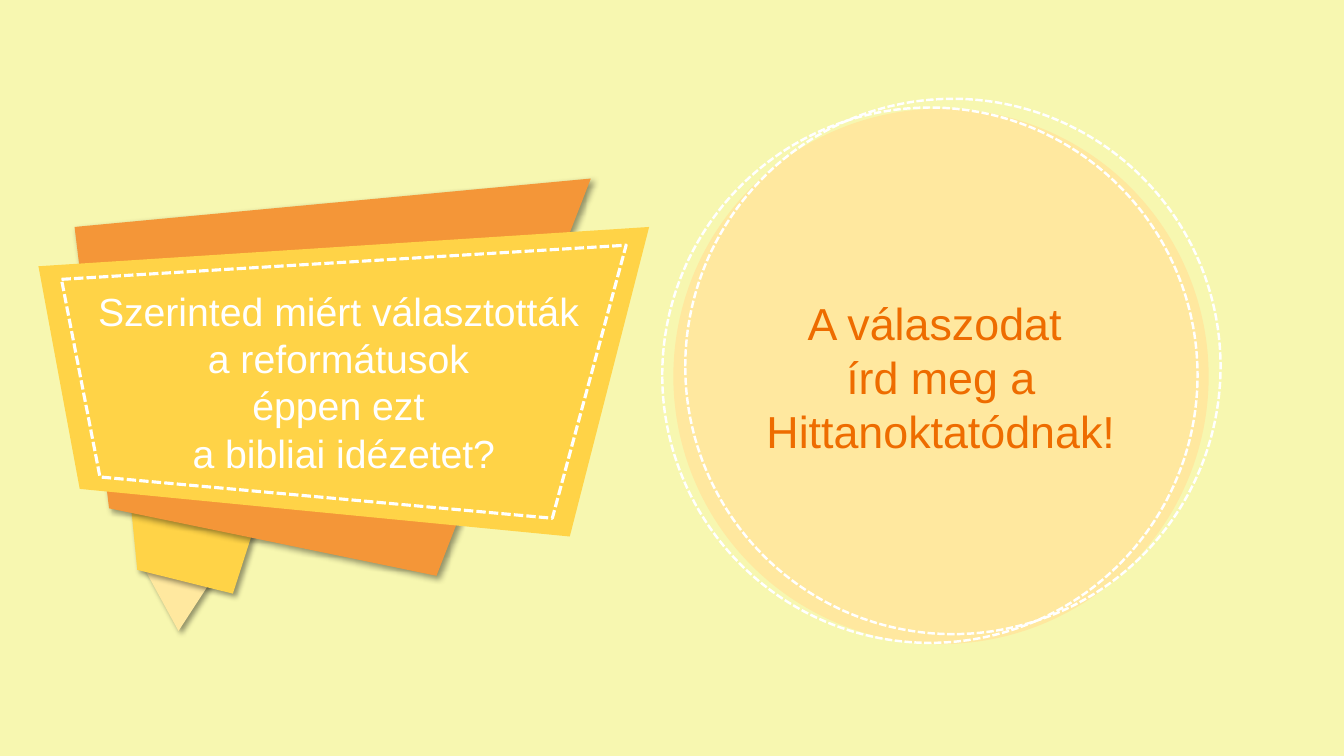
from lxml.etree import SubElement
from pptx import Presentation
from pptx.dml.color import RGBColor
from pptx.enum.dml import MSO_LINE
from pptx.enum.shapes import MSO_SHAPE
from pptx.enum.text import MSO_ANCHOR, PP_ALIGN
from pptx.oxml.ns import qn
from pptx.util import Cm, Pt

CREAM, YELLOW, ORANGE = "FFE89F", "FFD347", "F49638"
WHITE, DARK_ORANGE, PALE = "FFFFFF", "EE6C00", "F7F7B0"


def rgb(value):
    return RGBColor.from_string(value)


def paint(sp, color):
    sp.shadow.inherit = False
    sp.fill.solid()
    sp.fill.fore_color.rgb = rgb(color)
    sp.line.fill.background()


def dash(sp, width):
    sp.shadow.inherit = False
    sp.fill.background()
    sp.line.color.rgb = rgb(WHITE)
    sp.line.width = Pt(width)
    sp.line.dash_style = MSO_LINE.SQUARE_DOT


def add_shadow(sp):
    effects = sp._element.spPr.find(qn("a:effectLst"))
    shadow = SubElement(effects, qn("a:outerShdw"), blurRad=str(Pt(4)),
                        dist=str(Pt(3)), dir=str(45 * 60000),
                        algn="tl", rotWithShape="0")
    color = SubElement(shadow, qn("a:srgbClr"), val="000000")
    SubElement(color, qn("a:alpha"), val="40000")


def write(sp, text, size, color):
    tf = sp.text_frame
    tf.text = text
    tf.word_wrap = True
    tf.vertical_anchor = MSO_ANCHOR.MIDDLE
    for p in tf.paragraphs:
        p.alignment = PP_ALIGN.CENTER
        for r in p.runs:
            r.font.name = "Arial"
            r.font.size = Pt(size)
            r.font.color.rgb = rgb(color)


def add_polygon(shapes, left, top, points):
    corners = [(left + Cm(x), top + Cm(y)) for x, y in points]
    builder = shapes.build_freeform(*corners[0])
    builder.add_line_segments(corners[1:], close=True)
    return builder.convert_to_shape()


def add_answer_circle(s, left, top, size):
    sp = s.shapes.add_shape(MSO_SHAPE.OVAL, left, top, size, size)
    paint(sp, CREAM)
    write(sp, "A válaszodat \nírd meg a Hittanoktatódnak!", 32, DARK_ORANGE)
    for dx, dy in [(-0.28, -0.03), (0.3, -0.25)]:
        ring = s.shapes.add_shape(MSO_SHAPE.OVAL, left + Cm(dx), top + Cm(dy), size, size)
        dash(ring, 1.75)


def add_question_banner(s, left, top):
    shapes = s.shapes.add_group_shape().shapes
    folds = [
        (CREAM, [(4.85, 9.37), (3.53, 11.4), (2.67, 9.83), (3.84, 8.79)]),
        (YELLOW, [(2.24, 7.32), (6.05, 6.88), (4.9, 10.46), (2.49, 9.86)]),
        (ORANGE, [(0.91, 1.22), (13.92, 0), (10.03, 10.01), (1.78, 8.31)]),
    ]
    for color, points in folds:
        sp = add_polygon(shapes, left, top, points)
        paint(sp, color)
        add_shadow(sp)

    front = add_polygon(shapes, left, top,
                        [(0, 2.21), (15.39, 1.22), (13.39, 9.02), (1.04, 7.82)])
    paint(front, YELLOW)
    write(front, "Szerinted miért választották \na reformátusok \n"
                 "éppen ezt \na bibliai idézetet?", 28, WHITE)

    frame = add_polygon(shapes, left, top,
                        [(0.58, 2.54), (14.81, 1.68), (12.95, 8.56), (1.55, 7.52)])
    dash(frame, 2.25)


def main():
    prs = Presentation()
    prs.slide_width, prs.slide_height = Cm(33.87), Cm(19.05)
    s = prs.slides.add_slide(prs.slide_layouts[6])
    s.background.fill.solid()
    s.background.fill.fore_color.rgb = rgb(PALE)
    add_answer_circle(s, Cm(16.97), Cm(2.74), Cm(13.49))
    add_question_banner(s, Cm(0.97), Cm(4.5))
    prs.save("out.pptx")


if __name__ == "__main__":
    main()
